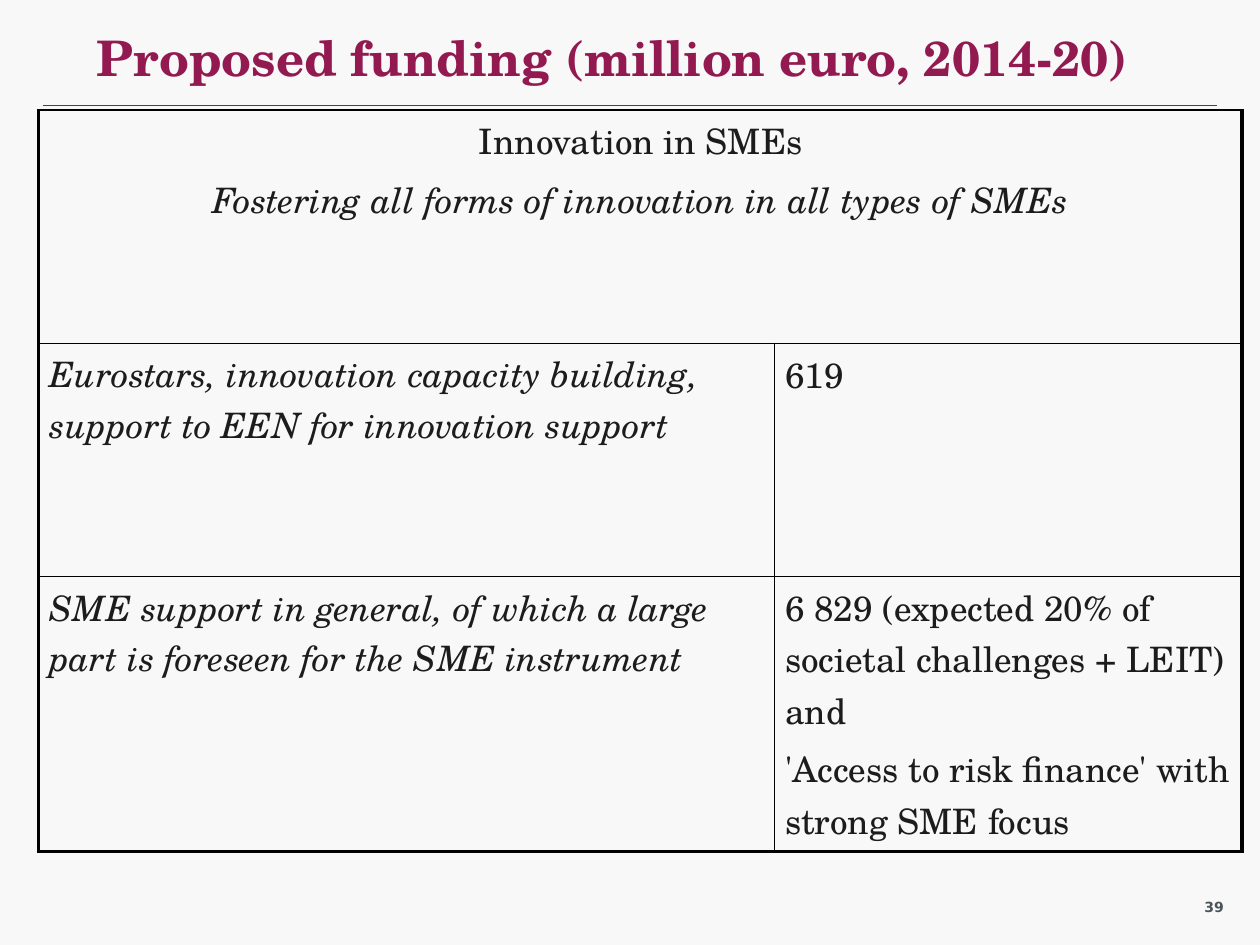
import lxml.etree
import pptx
import pptx.dml.color
import pptx.enum.shapes
import pptx.enum.text
import pptx.oxml.ns
import pptx.util

Cm, Pt = pptx.util.Cm, pptx.util.Pt
qn = pptx.oxml.ns.qn
COLOURS = {"page": "F8F8F8", "accent": "921A50", "body": "1C1C1C",
           "border": "000000", "number": "49545A"}
SERIF, SANS = "TeX Gyre Schola", "DejaVu Sans"
INNER, OUTER = 1, 2.25


def rgb(name):
    return pptx.dml.color.RGBColor.from_string(COLOURS[name])


class SlideBuilder:
    """Holds the text style and the slide that elements are added to."""

    def __init__(self, slide, font=SERIF, body_size=20):
        self.slide = slide
        self.font = font
        self.body_size = body_size
        background = slide.background.fill
        background.solid()
        background.fore_color.rgb = rgb("page")

    def run(self, paragraph, text, size, colour, font=None, bold=False, italic=False):
        run = paragraph.add_run()
        run.text = text
        run.font.name = font or self.font
        run.font.size = Pt(size)
        run.font.bold = bold
        run.font.italic = italic
        run.font.color.rgb = rgb(colour)

    def text(self, left, top, width, height, text, size, colour, font=None):
        frame = self.slide.shapes.add_textbox(
            Cm(left), Cm(top), Cm(width), Cm(height)).text_frame
        frame.word_wrap = True
        self.run(frame.paragraphs[0], text, size, colour, font, bold=True)

    def rule(self, left, right, y, colour, weight):
        rule = self.slide.shapes.add_connector(
            pptx.enum.shapes.MSO_CONNECTOR.STRAIGHT, Cm(left), Cm(y), Cm(right), Cm(y))
        rule.line.color.rgb = rgb(colour)
        rule.line.width = Pt(weight)
        lxml.etree.SubElement(rule._element.spPr, qn("a:effectLst"))

    def table(self, left, top, widths, heights):
        table = self.slide.shapes.add_table(
            len(heights), len(widths), Cm(left), Cm(top),
            Cm(sum(widths)), Cm(sum(heights))).table
        table.first_row = table.horz_banding = False
        for column, width in zip(table.columns, widths):
            column.width = Cm(width)
        for row, height in zip(table.rows, heights):
            row.height = Cm(height)
        return table

    def cell(self, cell, lines, centred=False):
        """Fill a cell with paragraphs given as (text, italic) pairs."""
        cell.margin_left, cell.margin_right = Cm(0.22), Cm(0.2)
        cell.margin_top = cell.margin_bottom = Cm(0.1)
        frame = cell.text_frame
        for index, (text, italic) in enumerate(lines):
            paragraph = frame.add_paragraph() if index else frame.paragraphs[0]
            if index:
                paragraph.space_before = Pt(0.2 * self.body_size)
            if centred:
                paragraph.alignment = pptx.enum.text.PP_ALIGN.CENTER
            self.run(paragraph, text, self.body_size, "body", italic=italic)

    def borders(self, cell, weights):
        """Draw the sides of a cell, given as left, right, top and bottom weights."""
        cell.fill.background()
        properties = cell._tc.get_or_add_tcPr()
        for index, (side, weight) in enumerate(zip("LRTB", weights)):
            line = lxml.etree.Element(qn(f"a:ln{side}"), w=str(int(Pt(weight))))
            fill = lxml.etree.SubElement(line, qn("a:solidFill"))
            lxml.etree.SubElement(fill, qn("a:srgbClr"), val=COLOURS["border"])
            properties.insert(index, line)


def main():
    deck = pptx.Presentation()
    deck.slide_width, deck.slide_height = Cm(25.4), Cm(19.05)
    builder = SlideBuilder(deck.slides.add_slide(deck.slide_layouts[6]))

    builder.rule(0.86, 24.54, 2.12, "accent", 0.5)
    builder.text(24.03, 17.98, 1.14, 0.84, "39", 8, "number", SANS)

    funding = [
        ("Eurostars, innovation capacity building, support to EEN for innovation support",
         ["619"]),
        ("SME support in general, of which a large part is foreseen for the SME instrument",
         ["6 829 (expected 20% of societal challenges + LEIT) and",
          "'Access to risk finance' with strong SME focus"]),
    ]
    last_row = len(funding)
    table = builder.table(0.78, 2.22, [14.83, 9.43], [4.7, 4.7, 5.55])
    heading = table.cell(0, 0)
    heading.merge(table.cell(0, 1))
    for row in range(last_row + 1):
        bottom = OUTER if row == last_row else INNER
        middle = INNER if row else OUTER
        builder.borders(table.cell(row, 0), (OUTER, middle, INNER, bottom))
        builder.borders(table.cell(row, 1), (middle, OUTER, INNER, bottom))

    builder.cell(heading, [
        ("Innovation in SMEs", False),
        ("Fostering all forms of innovation in all types of SMEs", True),
    ], centred=True)
    for row, (measure, amounts) in enumerate(funding, start=1):
        builder.cell(table.cell(row, 0), [(measure, True)])
        builder.cell(table.cell(row, 1), [(amount, False) for amount in amounts])

    builder.text(1.7, 0.43, 22.48, 1.4,
                 "Proposed funding (million euro, 2014-20)", 28, "accent")
    deck.save("out.pptx")


if __name__ == "__main__":
    main()
